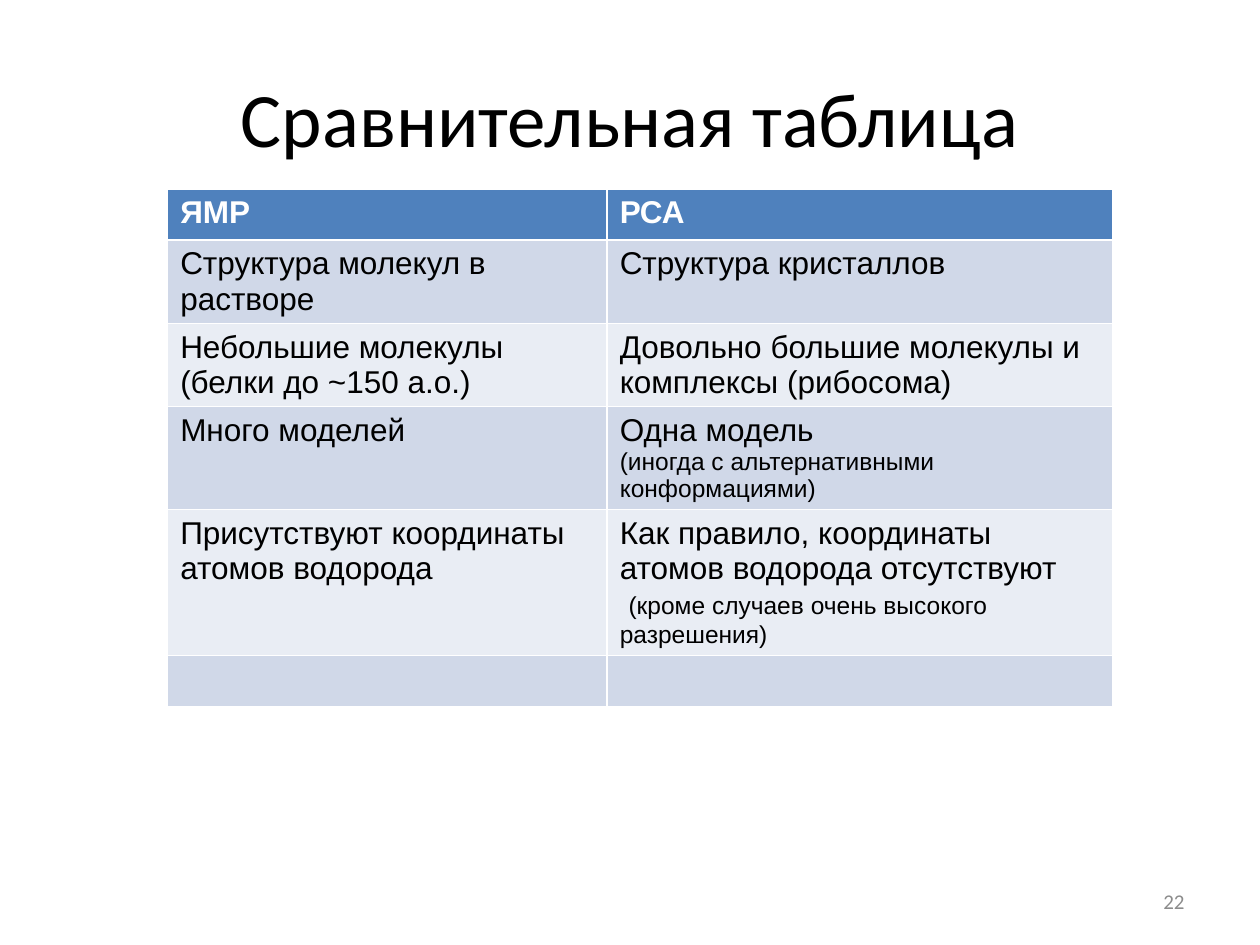
from dataclasses import dataclass

from pptx import Presentation
from pptx.dml.color import RGBColor
from pptx.enum.text import MSO_ANCHOR, PP_ALIGN
from pptx.slide import Slide
from pptx.util import Cm, Pt

BLACK = RGBColor(0x00, 0x00, 0x00)
WHITE = RGBColor(0xFF, 0xFF, 0xFF)
GRAY = RGBColor(0x8C, 0x8C, 0x8C)
HEADER_BLUE = RGBColor(0x4F, 0x81, 0xBD)
BAND_DARK = RGBColor(0xD0, 0xD8, 0xE8)
BAND_LIGHT = RGBColor(0xE9, 0xED, 0xF4)

HEADING = {"name": "Arial", "size": Pt(18), "bold": True, "color": WHITE}
BODY = {"name": "Arial", "size": Pt(18), "bold": False, "color": BLACK}
REMARK = {**BODY, "size": Pt(14)}
COLUMN_WIDTHS = (Cm(8.86), Cm(10.19))
ROW_HEIGHT = Cm(1.03)


@dataclass
class Entry:
    text: str = ""
    remark: str = ""
    remark_lead: str = ""


@dataclass
class Label:
    text: str
    left: float
    top: float
    width: float
    height: float
    align: PP_ALIGN
    size: int
    color: RGBColor


ROWS = (
    (Entry("ЯМР"), Entry("РСА")),
    (Entry("Структура молекул в растворе"), Entry("Структура кристаллов")),
    (
        Entry("Небольшие молекулы (белки до ~150 а.о.)"),
        Entry("Довольно большие молекулы и комплексы (рибосома)"),
    ),
    (
        Entry("Много моделей"),
        Entry("Одна модель", "(иногда с альтернативными конформациями)"),
    ),
    (
        Entry("Присутствуют координаты атомов водорода"),
        Entry(
            "Как правило, координаты атомов водорода отсутствуют",
            "(кроме случаев очень высокого разрешения)",
            " ",
        ),
    ),
    (Entry(), Entry()),
)

LABELS = (
    Label("Сравнительная таблица", 1.27, 0.76, 22.86, 3.18,
          PP_ALIGN.CENTER, 44, BLACK),
    Label("22", 18.21, 17.65, 5.92, 1.02, PP_ALIGN.RIGHT, 12, GRAY),
)


def add_span(para, text: str, style: dict) -> None:
    if not text:
        return
    span = para.add_run()
    span.text = text
    for key, value in style.items():
        if key == "color":
            span.font.color.rgb = value
        else:
            setattr(span.font, key, value)


def add_label(page: Slide, label: Label) -> None:
    box = page.shapes.add_textbox(
        Cm(label.left), Cm(label.top), Cm(label.width), Cm(label.height)
    )
    frame = box.text_frame
    frame.word_wrap = True
    frame.vertical_anchor = MSO_ANCHOR.MIDDLE
    para = frame.paragraphs[0]
    para.alignment = label.align
    style = {"name": "Calibri", "size": Pt(label.size), "color": label.color}
    add_span(para, label.text, style)


def fill_cell(cell, entry: Entry, color: RGBColor, style: dict) -> None:
    cell.fill.solid()
    cell.fill.fore_color.rgb = color
    para = cell.text_frame.paragraphs[0]
    add_span(para, entry.text, style)
    if entry.remark:
        para.add_line_break()
        add_span(para, entry.remark_lead, style)
        add_span(para, entry.remark, REMARK)


def add_comparison(page: Slide) -> None:
    table = page.shapes.add_table(
        len(ROWS), len(COLUMN_WIDTHS), Cm(3.38), Cm(3.81),
        sum(COLUMN_WIDTHS), ROW_HEIGHT * len(ROWS),
    ).table
    for column, width in zip(table.columns, COLUMN_WIDTHS):
        column.width = width
    for index, entries in enumerate(ROWS):
        table.rows[index].height = ROW_HEIGHT
        band = BAND_DARK if index % 2 else BAND_LIGHT
        color, style = (band, BODY) if index else (HEADER_BLUE, HEADING)
        for position, entry in enumerate(entries):
            fill_cell(table.cell(index, position), entry, color, style)


def main() -> None:
    deck = Presentation()
    deck.slide_width, deck.slide_height = Cm(25.4), Cm(19.05)
    page = deck.slides.add_slide(deck.slide_layouts[6])
    add_comparison(page)
    for label in LABELS:
        add_label(page, label)
    deck.save("out.pptx")


if __name__ == "__main__":
    main()
